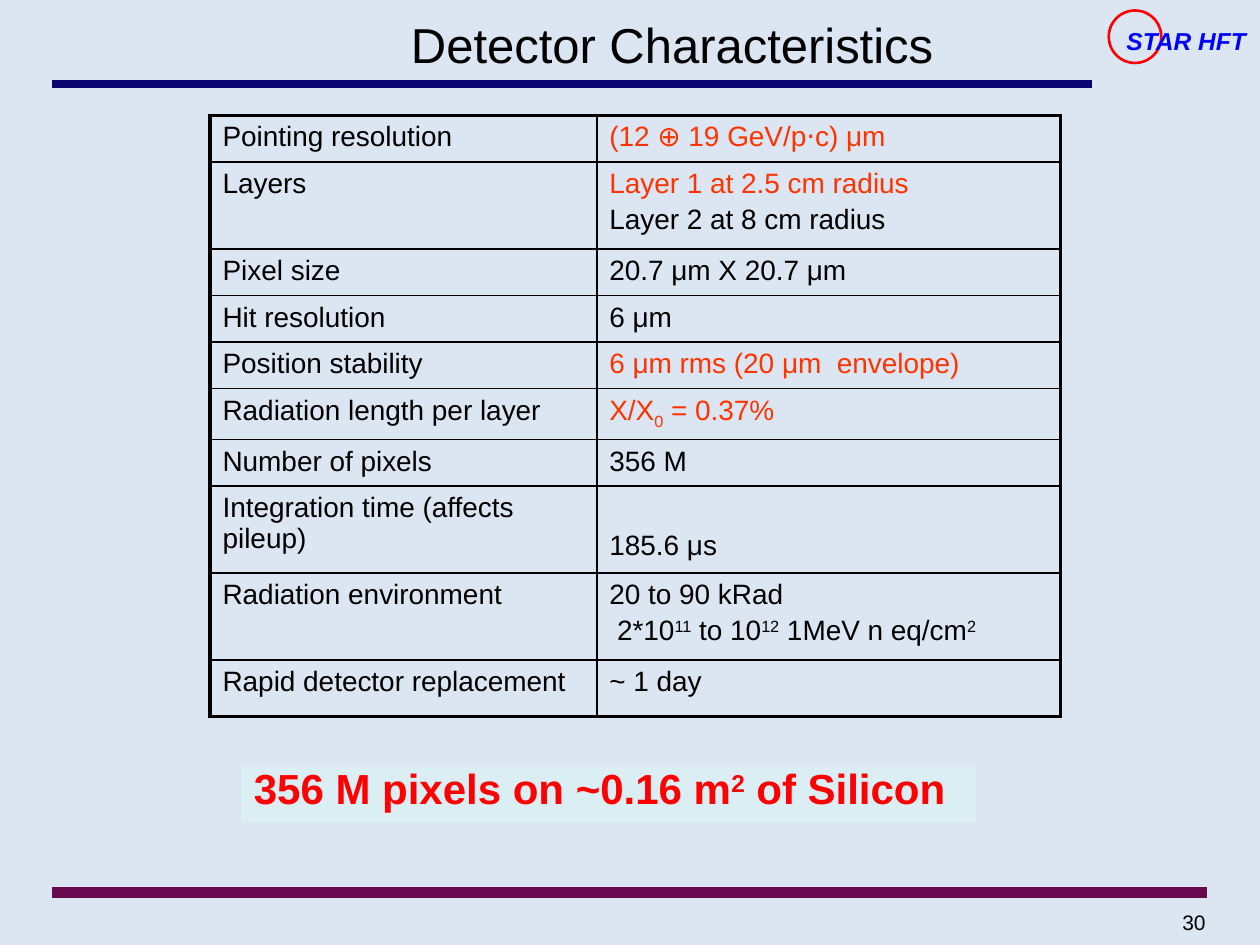
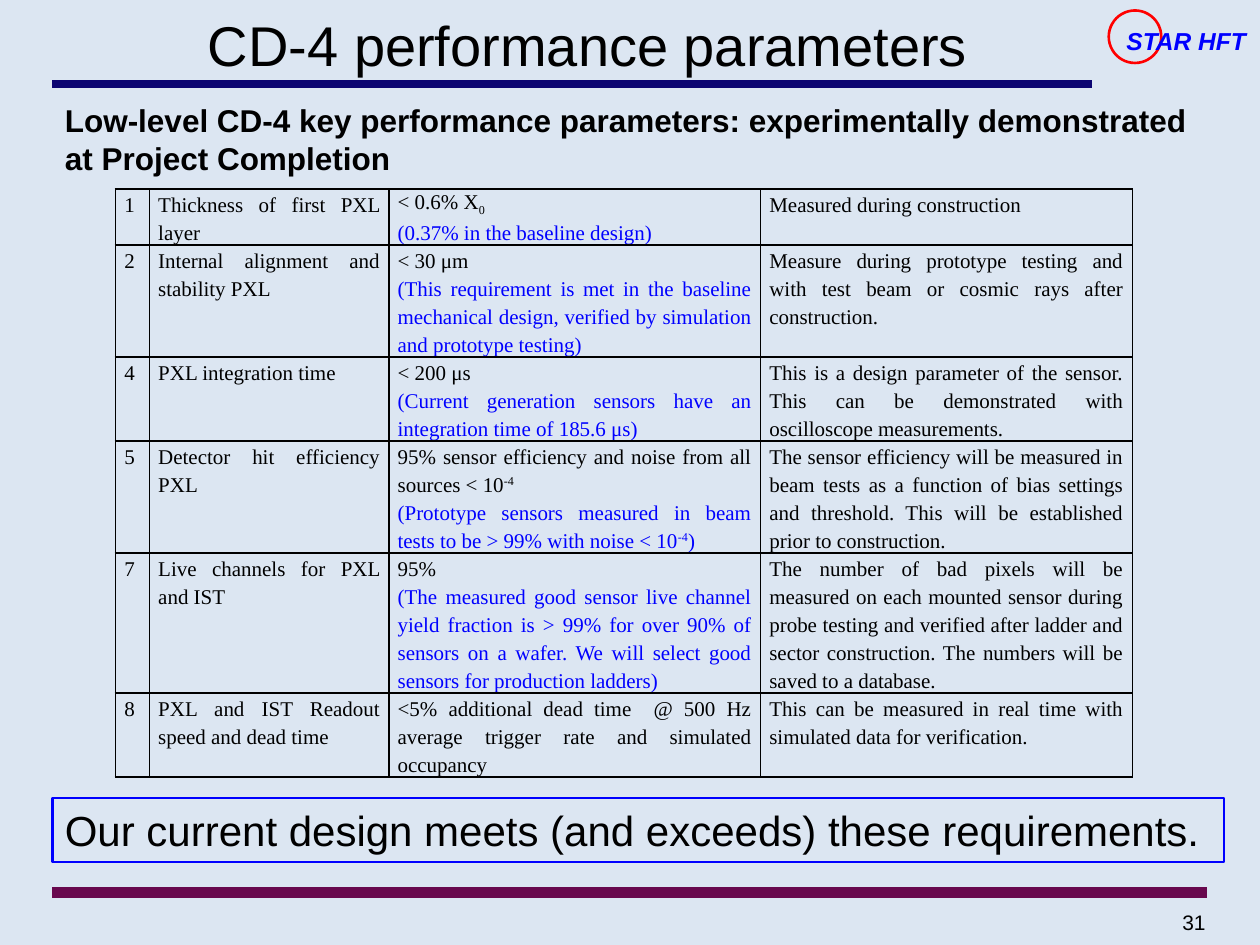
from dataclasses import dataclass

from lxml.etree import SubElement
from pptx import Presentation
from pptx.dml.color import RGBColor
from pptx.enum.shapes import MSO_CONNECTOR, MSO_SHAPE
from pptx.enum.text import MSO_ANCHOR, PP_ALIGN
from pptx.oxml.ns import qn
from pptx.util import Inches, Pt


@dataclass(frozen=True)
class Theme:
    ground: str = "DCE6F2"
    ink: str = "000000"
    navy: str = "0C0572"
    plum: str = "68084E"
    red: str = "FF0000"
    orange: str = "FF3300"
    blue: str = "0000FF"
    pale: str = "DBEEF4"
    sans: str = "Arial"
    serif: str = "Times New Roman"
    number_size: int = 12
    label_size: int = 14
    heading_size: int = 18
    message_size: int = 24


theme = Theme()
SUB, SUPER = -25, 30

# The slide is a grid of 120 columns by 90 rows
deck = Presentation()
deck.slide_width, deck.slide_height = Inches(10), Inches(7.5)
COLUMN, ROW = deck.slide_width / 120, deck.slide_height / 90


def write(frame, lines, size, font=theme.sans, colour=theme.ink, bold=None,
          italic=None, align=PP_ALIGN.LEFT, before=None, spacing=None):
    """Each line is a string or a list: colour, then strings and (text, baseline) pairs."""
    for index, line in enumerate(lines):
        para = frame.paragraphs[0] if index == 0 else frame.add_paragraph()
        para.alignment = align
        para.space_before = before
        para.line_spacing = spacing
        line_colour, *pieces = [colour, line] if isinstance(line, str) else line
        for piece in pieces:
            text, baseline = (piece, None) if isinstance(piece, str) else piece
            span = para.add_run()
            span.text = text
            span.font.name, span.font.size = font, Pt(size)
            span.font.bold, span.font.italic = bold, italic
            span.font.color.rgb = RGBColor.from_string(line_colour)
            if baseline:
                span.font._element.set("baseline", str(baseline * 1000))


def add_box(page, place, lines, size, wrap=True, anchor=MSO_ANCHOR.TOP,
            fill=None, outline=None, **style):
    left, top, width, height = place
    box = page.shapes.add_textbox(int(left * COLUMN), int(top * ROW),
                                  int(width * COLUMN), int(height * ROW))
    box.text_frame.word_wrap = wrap
    box.text_frame.vertical_anchor = anchor
    if fill:
        box.fill.solid()
        box.fill.fore_color.rgb = RGBColor.from_string(fill)
    if outline:
        box.line.color.rgb = RGBColor.from_string(outline)
        box.line.width = Pt(1.5)
    write(box.text_frame, lines, size, **style)


# Table contents: rows of cells, each cell a list of lines
orange, blue, ink = theme.orange, theme.blue, theme.ink
characteristics = [
    (["Pointing resolution"], [[orange, "(12 ⊕ 19 GeV/p⋅c) μm"]]),
    (["Layers"], [[orange, "Layer 1 at 2.5 cm radius"], "Layer 2 at 8 cm radius"]),
    (["Pixel size"], ["20.7 μm X 20.7 μm"]),
    (["Hit resolution"], ["6 μm"]),
    (["Position stability"], [[orange, "6 μm rms (20 μm  envelope)"]]),
    (["Radiation length per layer"], [[orange, "X/X", ("0", SUB), " = 0.37%"]]),
    (["Number of pixels"], ["356 M"]),
    (["Integration time (affects pileup)"], ["185.6 μs"]),
    (["Radiation environment"],
     ["20 to 90 kRad",
      [ink, " 2*10", ("11", SUPER), " to 10", ("12", SUPER), " 1MeV n eq/cm", ("2", SUPER)]]),
    (["Rapid detector replacement"], ["~ 1 day"]),
]
parameters = [
    (["1"], ["Thickness of first PXL layer"],
     [[ink, "< 0.6% X", ("0", SUB)], [blue, "(0.37% in the baseline design)"]],
     ["Measured during construction"]),
    (["2"], ["Internal alignment and stability PXL"],
     ["< 30 μm",
      [blue, "(This requirement is met in the baseline mechanical design, "
             "verified by simulation and prototype testing)"]],
     ["Measure during prototype testing and with test beam or cosmic rays "
      "after construction."]),
    (["4"], ["PXL integration time"],
     ["< 200 μs",
      [blue, "(Current generation sensors have an integration time of 185.6 μs)"]],
     ["This is a design parameter of the sensor. This can be demonstrated "
      "with oscilloscope measurements."]),
    (["5"], ["Detector hit efficiency PXL"],
     [[ink, "95% sensor efficiency and noise from all sources < 10", ("-4", SUPER)],
      [blue, "(Prototype sensors measured in beam tests to be > 99% with noise < 10",
       ("-4", SUPER), ")"]],
     ["The sensor efficiency will be measured in beam tests as a function of "
      "bias settings and threshold. This will be established prior to construction."]),
    (["7"], ["Live channels for PXL and IST"],
     ["95%",
      [blue, "(The measured good sensor live channel yield fraction is > 99% for over "
             "90% of sensors on a wafer. We will select good sensors for production ladders)"]],
     ["The number of bad pixels will be measured on each mounted sensor during probe "
      "testing and verified after ladder and sector construction. The numbers will be "
      "saved to a database."]),
    (["8"], ["PXL and IST Readout speed and dead time"],
     ["<5% additional dead time  @ 500 Hz average trigger rate and simulated occupancy"],
     ["This can be measured in real time with simulated data for verification."]),
]

# One entry per slide; table widths and heights are in inches
single, double, final = 0.37, 0.69, 0.45
text_line = 16 / 72
pages = [
    dict(number="30", title="Detector Characteristics", title_left=14, title_size=28,
         rows=characteristics, corner=(20, 11), widths=[3.07, 3.68],
         heights=[single, double, *[single] * 5, double, double, final],
         margins=(0.1, 0.05), frame_width=2.25, low_cell=(7, 1),
         style=dict(size=16, before=Pt(3))),
    dict(number="31", title="CD-4 performance parameters", title_left=6, title_size=32,
         rows=parameters, corner=(11, 18), widths=[0.27, 1.9, 2.95, 2.95],
         heights=[count * text_line for count in (2, 4, 3, 4, 5, 3)],
         margins=(0.07, 0), frame_width=1, low_cell=None,
         style=dict(size=12, font=theme.serif, align=PP_ALIGN.JUSTIFY, spacing=Pt(16))),
]

for plan in pages:
    page = deck.slides.add_slide(deck.slide_layouts[6])
    page.background.fill.solid()
    page.background.fill.fore_color.rgb = RGBColor.from_string(theme.ground)

    # Page number and the two rules
    add_box(page, (91, 86, 25, 3), [plan["number"]], theme.number_size, align=PP_ALIGN.RIGHT)
    for end, height, colour, weight in [(104, 8, theme.navy, 4.5), (115, 85, theme.plum, 6)]:
        y = int(height * ROW)
        rule = page.shapes.add_connector(MSO_CONNECTOR.STRAIGHT, int(5 * COLUMN), y,
                                         int(end * COLUMN), y)
        rule.line.color.rgb = RGBColor.from_string(colour)
        rule.line.width = Pt(weight)
        SubElement(rule._element.spPr, qn("a:effectLst"))

    # Corner badge with the project label
    badge = page.shapes.add_shape(MSO_SHAPE.OVAL, int(105.6 * COLUMN), int(ROW),
                                  int(5 * COLUMN), int(5 * ROW))
    badge.shadow.inherit = False
    badge.fill.background()
    badge.line.color.rgb = RGBColor.from_string(theme.red)
    badge.line.width = Pt(1.5)
    add_box(page, (106.1, 1.9, 13.9, 4), ["STAR HFT"], theme.label_size, wrap=False,
            colour=theme.blue, bold=True, italic=True)

    # Title
    add_box(page, (plan["title_left"], 1, 100, 6.4), [plan["title"]], plan["title_size"],
            anchor=MSO_ANCHOR.MIDDLE, align=PP_ALIGN.CENTER)

    # Table
    rows, widths, heights = plan["rows"], plan["widths"], plan["heights"]
    left, top = plan["corner"]
    table = page.shapes.add_table(len(rows), len(widths), int(left * COLUMN), int(top * ROW),
                                  Inches(sum(widths)), Inches(sum(heights))).table
    table.first_row = table.horz_banding = False
    for column, width in zip(table.columns, widths):
        column.width = Inches(width)
    for row, height in zip(table.rows, heights):
        row.height = Inches(height)
    side, above = (Inches(margin) for margin in plan["margins"])
    for r, contents in enumerate(rows):
        for c, lines in enumerate(contents):
            cell = table.cell(r, c)
            cell.margin_left = cell.margin_right = side
            cell.margin_top = cell.margin_bottom = above
            if (r, c) == plan["low_cell"]:
                cell.vertical_anchor = MSO_ANCHOR.BOTTOM
                cell.margin_bottom = Inches(0.09)
            write(cell.text_frame, lines, **plan["style"])
            outer_edges = {"L": c == 0, "R": c == len(widths) - 1,
                           "T": r == 0, "B": r == len(rows) - 1}
            for edge, outer in outer_edges.items():
                weight = Pt(plan["frame_width"] if outer else 1)
                border = SubElement(cell._tc.get_or_add_tcPr(), qn(f"a:ln{edge}"),
                                    w=str(int(weight)))
                SubElement(SubElement(border, qn("a:solidFill")), qn("a:srgbClr"),
                           val=theme.ink)
            cell.fill.background()

# Messages around the tables
detector, performance = deck.slides
add_box(detector, (23, 73, 70, 5.3),
        [[theme.red, "356 M pixels on ~0.16 m", ("2", SUPER), " of Silicon"]],
        theme.message_size, fill=theme.pale, bold=True, spacing=0.8)
add_box(performance, (5, 9, 112, 8.5),
        ["Low-level CD-4 key performance parameters: experimentally demonstrated "
         "at Project Completion"], theme.heading_size, bold=True)
add_box(performance, (5, 76, 111.6, 6.1),
        ["Our current design meets (and exceeds) these requirements."],
        theme.message_size, outline=theme.blue)

deck.save("out.pptx")
